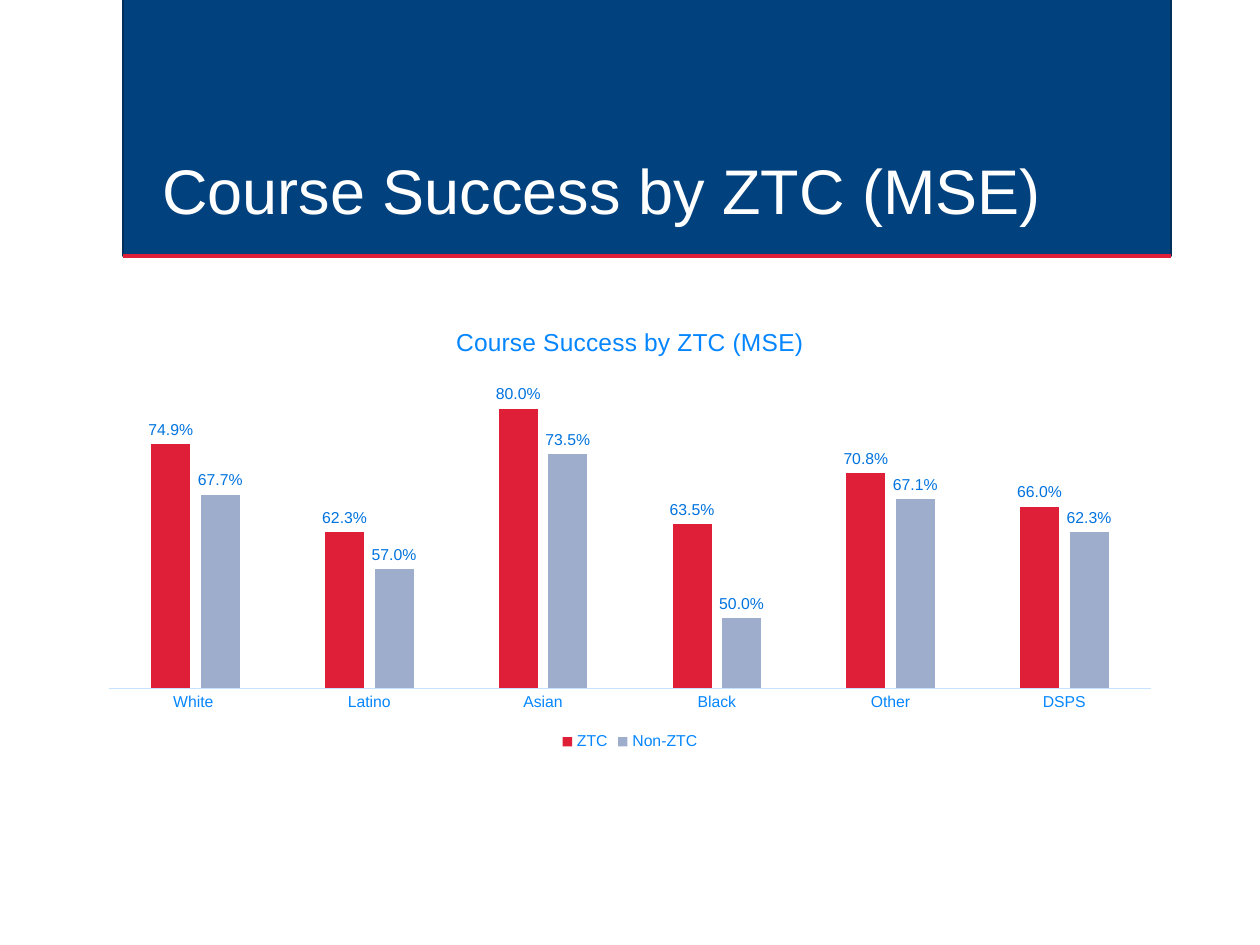
from typing import NamedTuple

from lxml import etree
from pptx import Presentation
from pptx.chart.data import CategoryChartData
from pptx.dml.color import RGBColor
from pptx.enum import chart as charts, shapes, text
from pptx.oxml import ns
from pptx.util import Pt

HEADING = "Course Success by ZTC (MSE)"
FONT = "Arial"
NAVY, RED, WHITE = "00417E", "DE1F37", "FFFFFF"
AXIS_BLUE, LABEL_BLUE = "0586FF", "0073DE"
PERCENT = "0.0%"


class SuccessRates(NamedTuple):
    name: str
    rates: tuple[float, ...]
    color: str


GROUPS = ("White ", "Latino", "Asian", "Black", "Other", "DSPS")
COURSES = (
    SuccessRates("ZTC", (0.749, 0.623, 0.8, 0.635, 0.708, 0.66), RED),
    SuccessRates("Non-ZTC", (0.677, 0.57, 0.735, 0.5, 0.671, 0.623), "9FADCD"),
)


def rgb(code: str) -> RGBColor:
    return RGBColor.from_string(code)


def style_font(font, size: float, color: str) -> None:
    font.name = FONT
    font.size = Pt(size)
    font.bold = False
    font.color.rgb = rgb(color)


def style_line(line, color: str, width: float) -> None:
    line.color.rgb = rgb(color)
    line.width = Pt(width)


def add_banner(slide) -> None:
    left, right, bottom = 70.5, 669.2, 146.2
    banner = slide.shapes.add_shape(
        shapes.MSO_SHAPE.RECTANGLE, Pt(left), Pt(-1.5), Pt(right - left), Pt(bottom + 1.5))
    banner.shadow.inherit = False
    banner.fill.solid()
    banner.fill.fore_color.rgb = rgb(NAVY)
    style_line(banner.line, "002F5B", 1.25)

    rule = slide.shapes.add_connector(
        shapes.MSO_CONNECTOR.STRAIGHT, Pt(left), Pt(bottom), Pt(right), Pt(bottom))
    style_line(rule.line, RED, 2.5)
    etree.SubElement(rule._element.spPr, ns.qn("a:effectLst"))


def add_heading(slide) -> None:
    heading = slide.shapes.add_textbox(Pt(85.7), Pt(63.4), Pt(567.4), Pt(70.6))
    frame = heading.text_frame
    frame.word_wrap = True
    frame.vertical_anchor = text.MSO_ANCHOR.BOTTOM
    paragraph = frame.paragraphs[0]
    paragraph.line_spacing = 0.9
    run = paragraph.add_run()
    run.text = HEADING
    style_font(run.font, 36, WHITE)


def set_plot_layout(chart, x: float, y: float, w: float, h: float) -> None:
    """Fix the inner plot area, as fractions of the chart's size."""
    plot_area = chart._chartSpace.chart.plotArea
    for old in plot_area.findall(ns.qn("c:layout")):
        plot_area.remove(old)
    layout = etree.Element(ns.qn("c:layout"))
    manual = etree.SubElement(layout, ns.qn("c:manualLayout"))
    settings = (("layoutTarget", "inner"), ("xMode", "edge"), ("yMode", "edge"),
                ("x", x), ("y", y), ("w", w), ("h", h))
    for tag, value in settings:
        etree.SubElement(manual, ns.qn(f"c:{tag}")).set("val", str(value))
    plot_area.insert(0, layout)


def style_axes(chart) -> None:
    groups = chart.category_axis
    groups.major_tick_mark = charts.XL_TICK_MARK.NONE
    groups.minor_tick_mark = charts.XL_TICK_MARK.NONE
    style_font(groups.tick_labels.font, 9, AXIS_BLUE)
    style_line(groups.format.line, "C5E3FF", 0.75)

    rates = chart.value_axis
    rates.minimum_scale = 0.4
    rates.maximum_scale = 0.85
    rates.has_major_gridlines = False
    rates.tick_labels.number_format = PERCENT
    rates.tick_labels.number_format_is_linked = False
    rates.visible = False


def style_series(series, color: str) -> None:
    series.format.fill.solid()
    series.format.fill.fore_color.rgb = rgb(color)
    series.invert_if_negative = False
    labels = series.data_labels
    labels.show_value = True
    labels.position = charts.XL_LABEL_POSITION.OUTSIDE_END
    labels.number_format = PERCENT
    labels.number_format_is_linked = False
    style_font(labels.font, 9, LABEL_BLUE)


def add_success_chart(slide) -> None:
    data = CategoryChartData(number_format=PERCENT)
    data.categories = GROUPS
    for course in COURSES:
        data.add_series(course.name, course.rates)
    chart = slide.shapes.add_chart(
        charts.XL_CHART_TYPE.COLUMN_CLUSTERED,
        Pt(49.7), Pt(175), Pt(620.6), Pt(257), data).chart
    style_font(chart.font, 10, NAVY)

    chart.has_title = True
    run = chart.chart_title.text_frame.paragraphs[0].add_run()
    run.text = HEADING
    style_font(run.font, 14, AXIS_BLUE)
    chart.chart_title.include_in_layout = False

    chart.has_legend = True
    chart.legend.position = charts.XL_LEGEND_POSITION.BOTTOM
    chart.legend.include_in_layout = False
    style_font(chart.legend.font, 9, AXIS_BLUE)

    plot = chart.plots[0]
    plot.vary_by_categories = False
    plot.gap_width = 219
    plot.overlap = -27
    for series, course in zip(plot.series, COURSES):
        style_series(series, course.color)
    style_axes(chart)
    set_plot_layout(chart, 0.02, 0.15, 0.96, 0.7)


def main() -> None:
    deck = Presentation()
    deck.slide_width, deck.slide_height = Pt(720), Pt(540)
    slide = deck.slides.add_slide(deck.slide_layouts[6])
    add_banner(slide)
    add_heading(slide)
    add_success_chart(slide)
    deck.save("out.pptx")


if __name__ == "__main__":
    main()
